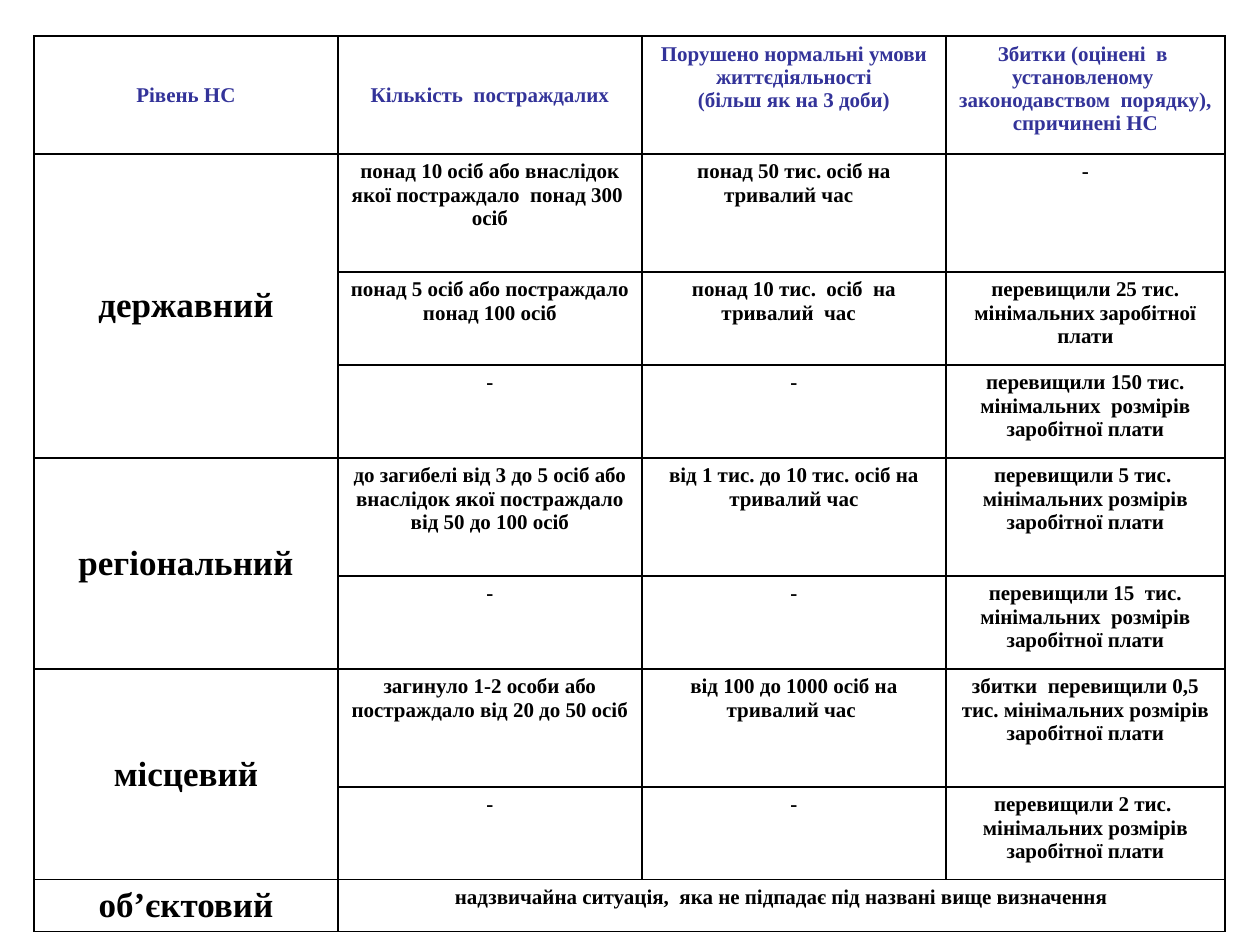
from lxml import etree
from pptx import Presentation, util as u
from pptx.dml.color import RGBColor
from pptx.enum import text
from pptx.oxml.ns import qn

PX = u.Inches(1) / 126
THEME = {
    "font": "Times New Roman",
    "heading": RGBColor(0x33, 0x33, 0x99),
    "body": RGBColor(0, 0, 0),
    "border": "000000",
    "border_width": u.Pt(1),
    "body_size": u.Pt(12),
    "level_size": u.Pt(20),
}

HEADINGS = [
    "Рівень НС",
    "Кількість  постраждалих",
    "Порушено нормальні умови життєдіяльності\n(більш як на 3 доби)",
    "Збитки (оцінені  в  установленому  законодавством  порядку), спричинені НС",
]
# Each level with its criteria: casualties, disrupted living conditions, losses
LEVELS = [
    ("державний", [
        ("понад 10 осіб або внаслідок якої постраждало  понад 300  осіб",
         "понад 50 тис. осіб на тривалий час  ", "-"),
        ("понад 5 осіб або постраждало понад 100 осіб",
         "понад 10 тис.  осіб  на тривалий  час  ",
         "перевищили 25 тис. мінімальних заробітної плати"),
        ("-", "-", "перевищили 150 тис. мінімальних  розмірів заробітної плати"),
    ]),
    ("регіональний", [
        ("до загибелі від 3 до 5 осіб або внаслідок якої постраждало від 50 до 100 осіб",
         "від 1 тис. до 10 тис. осіб на тривалий час",
         "перевищили 5 тис.  мінімальних розмірів заробітної плати"),
        ("-", "-", "перевищили 15  тис. мінімальних  розмірів заробітної плати"),
    ]),
    ("місцевий", [
        ("загинуло 1-2 особи або постраждало від 20 до 50 осіб",
         "від 100 до 1000 осіб на тривалий час ",
         "збитки  перевищили 0,5 тис. мінімальних розмірів заробітної плати"),
        ("-", "-", "перевищили 2 тис.  мінімальних розмірів заробітної плати"),
    ]),
    ("об’єктовий", [
        ("надзвичайна ситуація,  яка не підпадає під названі вище визначення",),
    ]),
]

LEFT, TOP = 34, 36
COLUMN_WIDTHS = [304, 304, 304, 279]
TALL, SHORT, LAST = 118, 93, 52
ROW_HEIGHTS = [TALL, TALL, SHORT, SHORT, TALL, SHORT, TALL, SHORT, LAST]


def px(length):
    return u.Emu(round(length * PX))


def add_borders(cell):
    properties = cell._tc.get_or_add_tcPr()
    for position, side in enumerate(("lnL", "lnR", "lnT", "lnB")):
        line = etree.Element(qn(f"a:{side}"), w=str(THEME["border_width"]))
        fill = etree.SubElement(line, qn("a:solidFill"))
        etree.SubElement(fill, qn("a:srgbClr"), val=THEME["border"])
        properties.insert(position, line)


def write(cell, wording, size="body_size", color="body", middle=False):
    cell.text_frame.text = wording
    if middle:
        cell.vertical_anchor = text.MSO_ANCHOR.MIDDLE
    for paragraph in cell.text_frame.paragraphs:
        paragraph.alignment = text.PP_ALIGN.CENTER
        for run in paragraph.runs:
            run.font.name = THEME["font"]
            run.font.size = THEME[size]
            run.font.bold = True
            run.font.color.rgb = THEME[color]


def main():
    prs = Presentation()
    prs.slide_width, prs.slide_height = u.Inches(10), u.Inches(7.5)
    slide = prs.slides.add_slide(prs.slide_layouts[6])

    criteria = slide.shapes.add_table(
        len(ROW_HEIGHTS), len(COLUMN_WIDTHS), px(LEFT), px(TOP),
        px(sum(COLUMN_WIDTHS)), px(sum(ROW_HEIGHTS))).table
    criteria.first_row = criteria.horz_banding = False
    for column, width in zip(criteria.columns, COLUMN_WIDTHS):
        column.width = px(width)
    for row, height in zip(criteria.rows, ROW_HEIGHTS):
        row.height = px(height)
    for cell in criteria.iter_cells():
        cell.fill.background()
        add_borders(cell)

    for col, heading in enumerate(HEADINGS):
        write(criteria.cell(0, col), heading, color="heading", middle=col < 2)

    last_col = len(COLUMN_WIDTHS) - 1
    first = 1
    for level, cases in LEVELS:
        level_cell = criteria.cell(first, 0)
        if len(cases) > 1:
            level_cell.merge(criteria.cell(first + len(cases) - 1, 0))
        write(level_cell, level, size="level_size", middle=len(cases) > 1)
        for row, case in enumerate(cases, first):
            if len(case) == 1:
                criteria.cell(row, 1).merge(criteria.cell(row, last_col))
            for col, criterion in enumerate(case, 1):
                write(criteria.cell(row, col), criterion)
        first += len(cases)

    prs.save("out.pptx")


if __name__ == "__main__":
    main()
